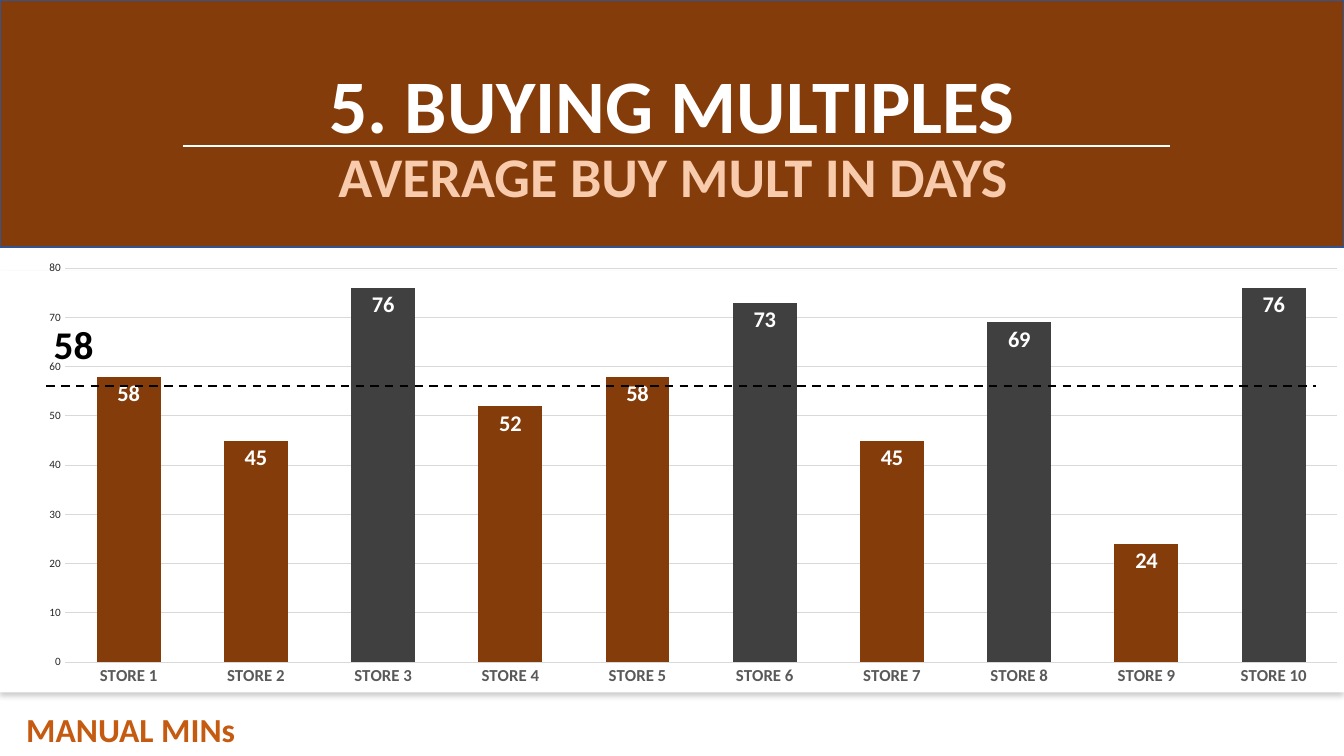
from lxml import etree
from pptx import Presentation
from pptx.chart.data import CategoryChartData
from pptx.dml.color import RGBColor
from pptx.enum.chart import XL_CHART_TYPE, XL_LABEL_POSITION, XL_TICK_MARK
from pptx.enum.dml import MSO_LINE
from pptx.enum.shapes import MSO_CONNECTOR, MSO_SHAPE
from pptx.enum.text import MSO_AUTO_SIZE, PP_ALIGN
from pptx.oxml import parse_xml
from pptx.oxml.ns import nsdecls, qn
from pptx.util import Inches, Pt

STACKED = XL_CHART_TYPE.COLUMN_STACKED
INSIDE_END = XL_LABEL_POSITION.INSIDE_END
NO_TICK = XL_TICK_MARK.NONE
DASH = MSO_LINE.DASH
STRAIGHT = MSO_CONNECTOR.STRAIGHT
RECTANGLE = MSO_SHAPE.RECTANGLE
GROW = MSO_AUTO_SIZE.SHAPE_TO_FIT_TEXT
LEFT, CENTER = PP_ALIGN.LEFT, PP_ALIGN.CENTER

COLORS = {
    "brown": "843C0B", "border": "325491", "white": "FFFFFF", "peach": "F8CBAD",
    "orange": "C55A11", "black": "000000", "charcoal": "404040",
    "category": "595959", "scale": "262626", "grid": "D9D9D9",
}
BUY_DAYS = [58, 45, 76, 52, 58, 73, 45, 69, 24, 76]
AVERAGE_DAYS = 58
PLOT_AREA = {"x": 0.039, "y": 0.019, "w": 0.956, "h": 0.911}


class SlideBuilder:
    def __init__(self, slide, colors, font_name):
        self.slide = slide
        self.colors = colors
        self.font_name = font_name

    def color(self, name):
        return RGBColor.from_string(self.colors[name])

    def style_font(self, font, size, color, bold=False):
        font.name = self.font_name
        font.size = Pt(size)
        font.bold = bold
        font.color.rgb = self.color(color)

    def style_line(self, line, color, width):
        line.color.rgb = self.color(color)
        line.width = Pt(width)

    def fill(self, target, color):
        target.fill.solid()
        target.fill.fore_color.rgb = self.color(color)

    def rectangle(self, box, color, border=None, shadow=False):
        shape = self.slide.shapes.add_shape(RECTANGLE, *map(Inches, box))
        shape.shadow.inherit = False
        self.fill(shape, color)
        if border:
            self.style_line(shape.line, border, 1)
        else:
            shape.line.fill.background()
        if shadow:
            effects = shape._element.spPr.find(qn("a:effectLst"))
            effects.append(parse_xml(
                f'<a:outerShdw {nsdecls("a")} blurRad="{Pt(4)}" dist="{Pt(3)}" '
                'dir="5400000" algn="t" rotWithShape="0">'
                f'<a:srgbClr val="{self.colors["black"]}"><a:alpha val="20000"/>'
                '</a:srgbClr></a:outerShdw>'))

    def text(self, box, words, size, color, align=CENTER, inset=True, spacing=None):
        shape = self.slide.shapes.add_textbox(*map(Inches, box))
        frame = shape.text_frame
        frame.word_wrap = True
        frame.auto_size = GROW
        if not inset:
            frame.margin_left = frame.margin_right = 0
            frame.margin_top = frame.margin_bottom = 0
        frame.text = words
        paragraph = frame.paragraphs[0]
        paragraph.alignment = align
        if spacing:
            paragraph.line_spacing = spacing
        self.style_font(paragraph.runs[0].font, size, color, bold=True)

    def horizontal_line(self, left, right, top, color, dash=None):
        connector = self.slide.shapes.add_connector(
            STRAIGHT, Inches(left), Inches(top), Inches(right), Inches(top))
        self.style_line(connector.line, color, 1.5)
        if dash:
            connector.line.dash_style = dash
        etree.SubElement(connector._element.spPr, qn("a:effectLst"))

    def column_chart(self, box, values, threshold):
        """Draw one column per store, dark where the value is above the threshold."""
        data = CategoryChartData()
        data.categories = [f"STORE {number}" for number in range(1, len(values) + 1)]
        data.add_series("Series 1", values)
        chart = self.slide.shapes.add_chart(STACKED, *map(Inches, box), data).chart
        chart.has_legend = False
        chart.has_title = False
        self.style_font(chart.font, 10, "black")
        self.style_axes(chart)
        self.place_plot(chart)

        plot = chart.plots[0]
        plot.gap_width = 99
        plot.overlap = 100
        plot.vary_by_categories = False
        series = plot.series[0]
        self.fill(series.format, "brown")
        for index, value in enumerate(values):
            if value > threshold:
                self.fill(series.points[index].format, "charcoal")
        labels = series.data_labels
        labels.show_value = True
        labels.position = INSIDE_END
        self.style_font(labels.font, 16, "white", bold=True)

    def style_axes(self, chart):
        stores, days = chart.category_axis, chart.value_axis
        for axis in (stores, days):
            axis.major_tick_mark = axis.minor_tick_mark = NO_TICK
        self.style_font(stores.tick_labels.font, 12, "category", bold=True)
        self.style_line(stores.format.line, "grid", 0.75)
        self.style_font(days.tick_labels.font, 8, "scale")
        days.format.line.fill.background()
        days.minimum_scale, days.maximum_scale, days.major_unit = 0, 80, 10
        days.has_major_gridlines = True
        self.style_line(days.major_gridlines.format.line, "grid", 0.75)

    def place_plot(self, chart):
        plot_area = chart._chartSpace.chart.plotArea
        for old_layout in plot_area.findall(qn("c:layout")):
            plot_area.remove(old_layout)
        settings = {"layoutTarget": "inner", "xMode": "edge", "yMode": "edge", **PLOT_AREA}
        items = "".join(f'<c:{key} val="{value}"/>' for key, value in settings.items())
        plot_area.insert(0, parse_xml(
            f'<c:layout {nsdecls("c")}><c:manualLayout>{items}</c:manualLayout></c:layout>'))


def main():
    presentation = Presentation()
    presentation.slide_width = Inches(13.33)
    presentation.slide_height = Inches(7.5)
    slide = presentation.slides.add_slide(presentation.slide_layouts[6])
    builder = SlideBuilder(slide, COLORS, "Calibri")

    builder.rectangle((0, 0, 13.33, 2.45), "brown", border="border")
    builder.text((0, 0.53, 13.33, 1.01), "5. BUYING MULTIPLES", 54, "white")
    builder.text((0.01, 1.36, 13.33, 0.77), "AVERAGE BUY MULT IN DAYS", 40, "peach")
    builder.horizontal_line(1.82, 11.6, 1.45, "white")
    builder.text((0.26, 7.03, 9.46, 0.4), "MANUAL MINs", 24, "orange", LEFT, inset=False)

    builder.rectangle((0, 2.69, 13.33, 4.18), "white", shadow=True)
    builder.column_chart((0.13, 2.58, 13.2, 4.29), BUY_DAYS, AVERAGE_DAYS)
    builder.horizontal_line(0.46, 13.05, 3.83, "black", DASH)
    builder.text((0.13, 3.23, 1.2, 0.42), str(AVERAGE_DAYS), 28, "black",
                 inset=False, spacing=0.9)

    presentation.save("out.pptx")


if __name__ == "__main__":
    main()
